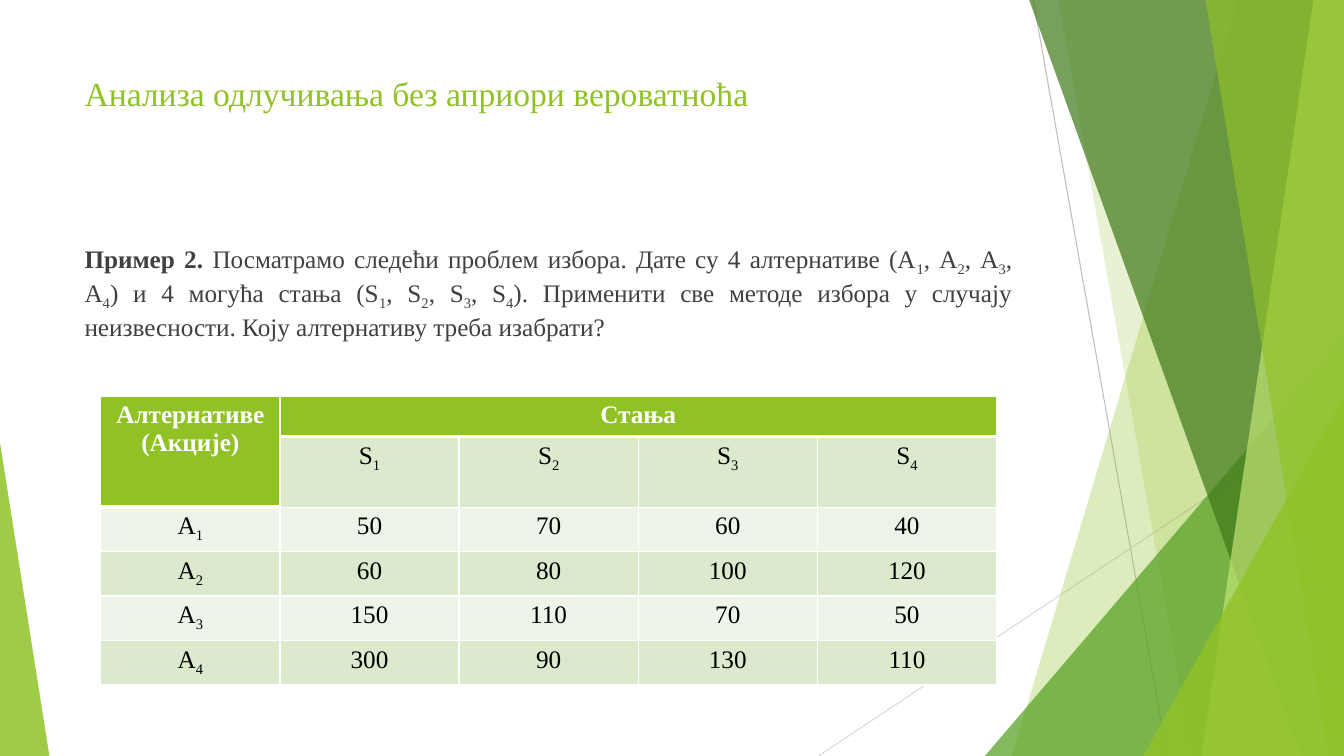
from dataclasses import dataclass

from lxml import etree
from pptx import Presentation
from pptx import util as u
from pptx.dml.color import RGBColor
from pptx.enum import shapes, text
from pptx.oxml import ns

FONT = "Times New Roman"
LIME = "90C226"
WHITE = "FFFFFF"
WIDE, HIGH = u.Inches(13.333), u.Inches(7.5)


@dataclass
class Band:
    top: float
    foot: float
    color: str
    alpha: int


@dataclass
class Wedge:
    left: float
    top: float
    width: float
    tip: int
    color: str
    alpha: int


@dataclass
class Ray:
    start: tuple[float, float]
    end: tuple[float, float]
    color: str


@dataclass
class Block:
    top: float
    height: float
    size: int
    color: str
    align: text.PP_ALIGN
    runs: list[tuple[str, bool]]


RAYS = [
    Ray((76.88, 0), (86.85, 100), "BFBFBF"),
    Ray((100, 53.73), (60.9, 100), "D9D9D9"),
]
FACETS = [
    Band(92.1, 75.3, LIME, 30),
    Band(78.75, 88.73, LIME, 20),
    Wedge(73.28, 44.4, 26.72, 1, "54A021", 72),
    Band(76.58, 96.83, "3F7819", 70),
    Band(97.73, 89.4, "C0E474", 70),
    Band(89.7, 98.85, LIME, 65),
    Wedge(85.05, 52.4, 14.95, 1, LIME, 80),
    Wedge(0, 58.53, 3.68, 0, LIME, 85),
]
BLOCKS = [
    Block(8.93, 19.2, 24, LIME, text.PP_ALIGN.LEFT,
          [("Анализа одлучивања без априори вероватноћа", False)]),
    Block(31.47, 56.53, 18, "404040", text.PP_ALIGN.JUSTIFY, [
        ("Пример 2.", True),
        (" Посматрамо следећи проблем избора. Дате су 4 алтернативе "
         "(А_1, А_2, А_3, А_4) и 4 могућа стања (S_1, S_2, S_3, S_4). "
         "Применити све методе избора у случају неизвесности. "
         "Коју алтернативу треба изабрати?", False),
    ]),
]
GRID = [
    ["Алтернативе\n(Акције)", "Стања", "", "", ""],
    ["", "S_1", "S_2", "S_3", "S_4"],
    ["А_1", "50", "70", "60", "40"],
    ["А_2", "60", "80", "100", "120"],
    ["А_3", "150", "110", "70", "50"],
    ["А_4", "300", "90", "130", "110"],
]
ROWS = [4.0 * 4 / 3, 8.67] + [5.56] * 4
COL = 13.33


def across(share: float) -> int:
    return round(WIDE * share / 100)


def down(share: float) -> int:
    return round(HIGH * share / 100)


def tint(code: str) -> RGBColor:
    return RGBColor.from_string(code)


def paint(shape, color: str, alpha: int) -> None:
    shape.shadow.inherit = False
    shape.fill.solid()
    shape.fill.fore_color.rgb = tint(color)
    shape.line.fill.background()
    node = shape.fill._xPr.find(".//" + ns.qn("a:srgbClr"))
    etree.SubElement(node, ns.qn("a:alpha"), val=str(alpha * 1000))


def draw_ray(slide, ray: Ray) -> None:
    line = slide.shapes.add_connector(
        shapes.MSO_CONNECTOR.STRAIGHT,
        across(ray.start[0]), down(ray.start[1]),
        across(ray.end[0]), down(ray.end[1]))
    line.line.color.rgb = tint(ray.color)
    line.line.width = u.Pt(0.75)
    etree.SubElement(line._element.spPr, ns.qn("a:effectLst"))


def draw_band(slide, band: Band) -> None:
    pen = slide.shapes.build_freeform(across(band.top), 0)
    pen.add_line_segments(
        [(WIDE, 0), (WIDE, HIGH), (across(band.foot), HIGH)], close=True)
    paint(pen.convert_to_shape(), band.color, band.alpha)


def draw_wedge(slide, wedge: Wedge) -> None:
    shape = slide.shapes.add_shape(
        shapes.MSO_SHAPE.ISOSCELES_TRIANGLE, across(wedge.left),
        down(wedge.top), across(wedge.width), down(100 - wedge.top))
    shape.adjustments[0] = wedge.tip
    paint(shape, wedge.color, wedge.alpha)


def add_run(para, words: str, size: int, color: str, bold: bool):
    run = para.add_run()
    run.text = words
    font = run.font
    font.name, font.size, font.bold = FONT, u.Pt(size), bold
    font.color.rgb = tint(color)
    return run


def write(para, words: str, size: int, color: str, bold: bool) -> None:
    first, *parts = words.split("_")
    add_run(para, first, size, color, bold)
    for part in parts:
        low = add_run(para, part[0], size, color, bold)
        low.font._element.set("baseline", "-25000")
        if part[1:]:
            add_run(para, part[1:], size, color, bold)


def draw_block(slide, block: Block) -> None:
    box = slide.shapes.add_textbox(
        across(5.55), down(block.top), across(70.5), down(block.height))
    frame = box.text_frame
    frame.word_wrap = True
    para = frame.paragraphs[0]
    para.alignment = block.align
    if block.align == text.PP_ALIGN.JUSTIFY:
        para.space_before = u.Pt(10)
    for words, bold in block.runs:
        write(para, words, block.size, block.color, bold)


def edge(cell, row: int) -> None:
    props = cell._tc.get_or_add_tcPr()
    thick = {"T": row == 1, "B": row == 0}
    for side in "LRTB":
        width = u.Pt(3 if thick.get(side) else 1)
        line = etree.SubElement(props, ns.qn("a:ln" + side), w=str(width))
        fill = etree.SubElement(line, ns.qn("a:solidFill"))
        etree.SubElement(fill, ns.qn("a:srgbClr"), val=WHITE)


def fill_cell(cell, words: str, row: int, head: bool) -> None:
    edge(cell, row)
    cell.fill.solid()
    cell.fill.fore_color.rgb = tint(
        LIME if head else ("DBE9CD" if row % 2 else "EEF4E8"))
    frame = cell.text_frame
    for spot, line in enumerate(words.split("\n") if words else []):
        para = frame.add_paragraph() if spot else frame.paragraphs[0]
        para.alignment = text.PP_ALIGN.CENTER
        write(para, line, 18, WHITE if head else "000000", head)


def draw_table(slide) -> None:
    count = len(GRID[0])
    table = slide.shapes.add_table(
        len(GRID), count, across(7.5), down(52.4),
        across(COL * count), down(sum(ROWS))).table
    table.first_row = table.horz_banding = False
    for col in table.columns:
        col.width = across(COL)
    for row, (line, share) in enumerate(zip(GRID, ROWS)):
        table.rows[row].height = down(share)
        for col, words in enumerate(line):
            head = row == 0 or (row == 1 and col == 0)
            fill_cell(table.cell(row, col), words, row, head)
    table.cell(0, 0).merge(table.cell(1, 0))
    table.cell(0, 1).merge(table.cell(0, count - 1))


def main() -> None:
    deck = Presentation()
    deck.slide_width, deck.slide_height = WIDE, HIGH
    slide = deck.slides.add_slide(deck.slide_layouts[6])
    for ray in RAYS:
        draw_ray(slide, ray)
    for facet in FACETS:
        if isinstance(facet, Band):
            draw_band(slide, facet)
        else:
            draw_wedge(slide, facet)
    for block in BLOCKS:
        draw_block(slide, block)
    draw_table(slide)
    deck.save("out.pptx")


if __name__ == "__main__":
    main()
